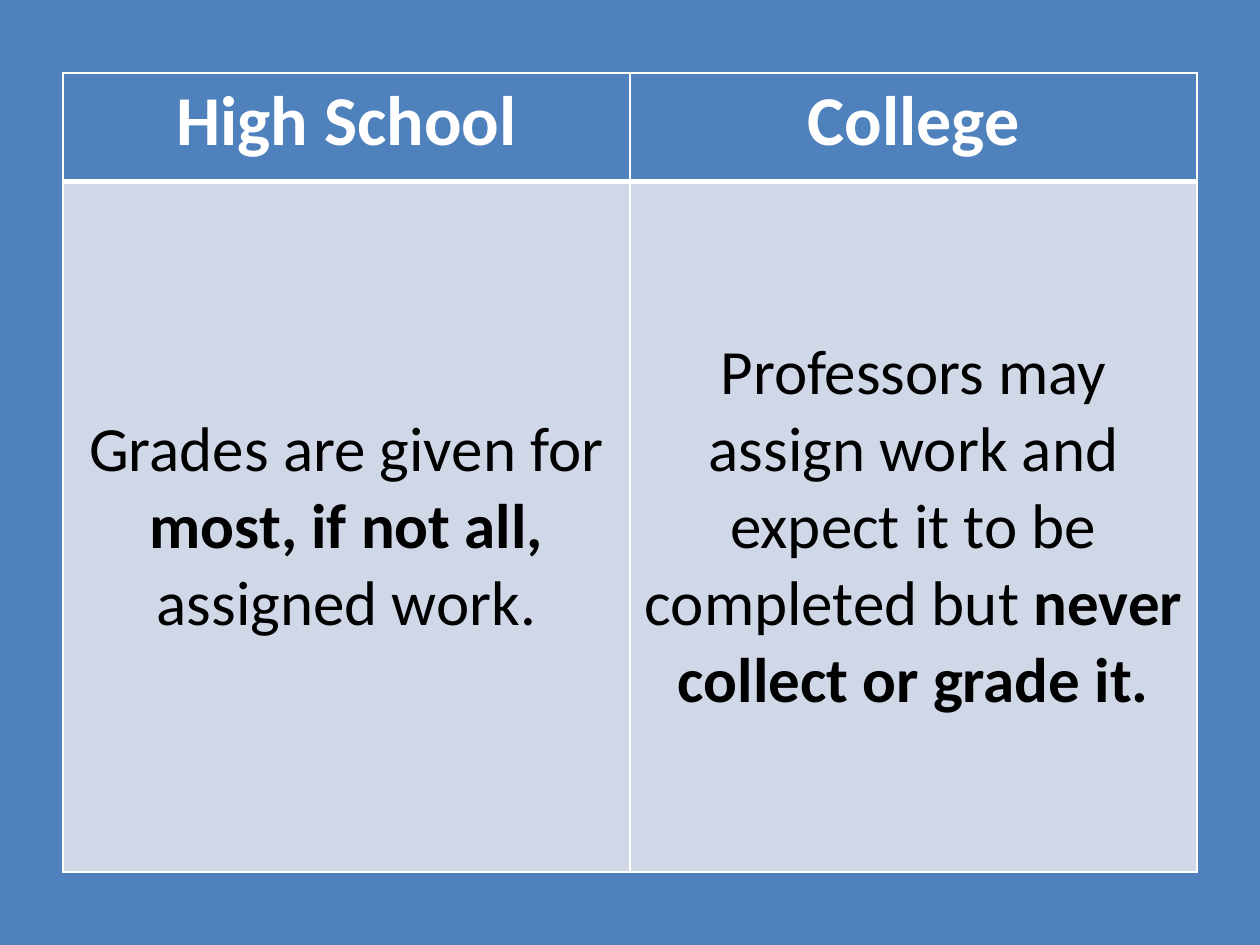
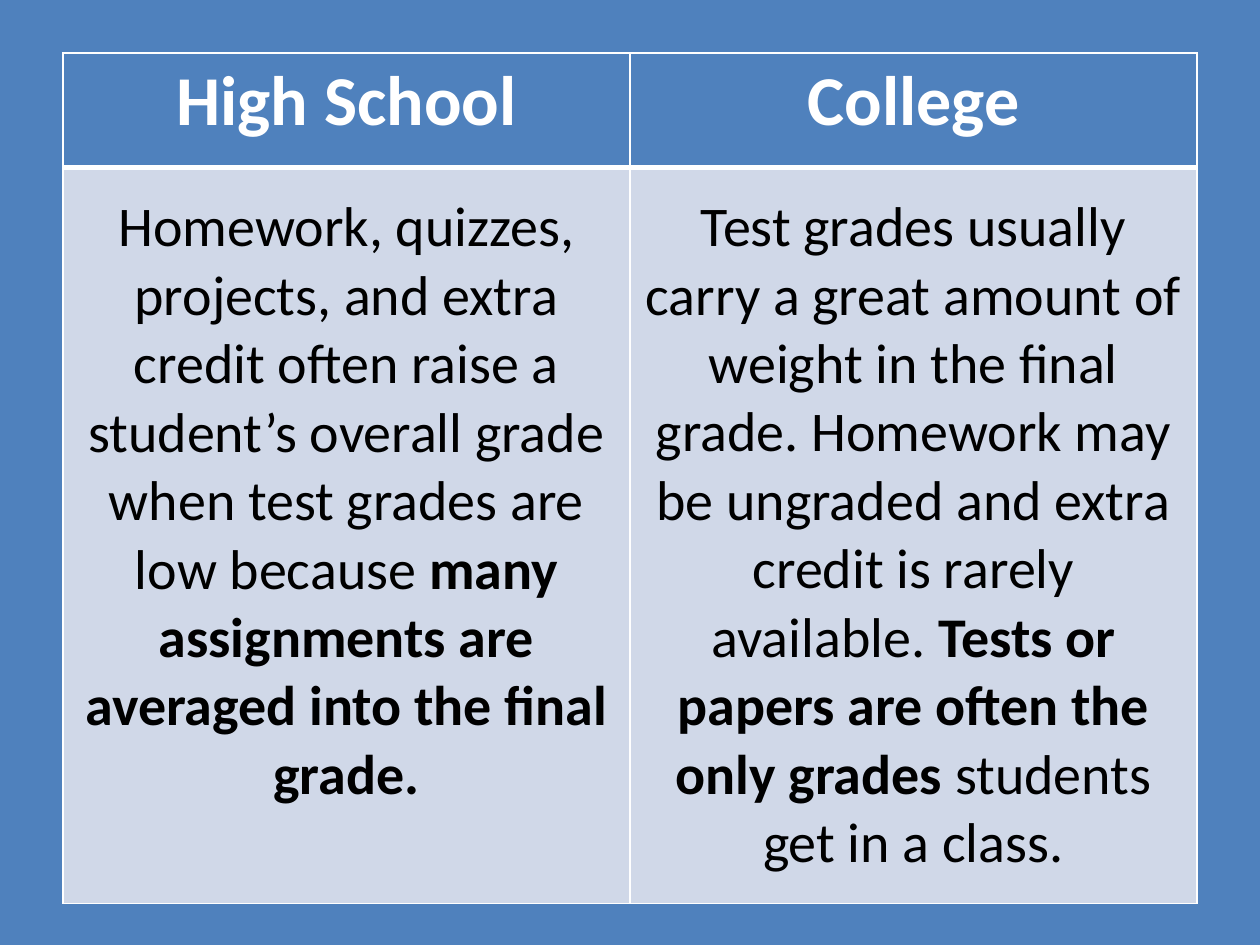
"""Build two slides comparing grading in high school and college."""
import pptx
import pptx.dml.color
import pptx.enum.text
import pptx.oxml
import pptx.oxml.ns
import pptx.util
from pptx.util import Inches

COLORS = {"blue": "4F81BD", "pale": "D0D8E8", "white": "FFFFFF", "black": "000000"}
FONT = "Calibri"
HEADERS = ["High School", "College"]
HEADER_SIZE = 40
LEFT, COL_WIDTH = 0.5, 4.5
THIN, THICK = 1, 3

SLIDES = [
    {
        "top": 0.58, "rows": [0.86, 5.48], "size": 36, "bottom_margins": [0.05, 0.05],
        "cells": [
            [("Grades are given for ", False), ("most, if not all, ", True),
             ("assigned work.", False)],
            [("Professors may assign work and expect it to be completed but ", False),
             ("never collect or grade it.", True)],
        ],
    },
    {
        "top": 0.42, "rows": [0.91, 5.84], "size": 32, "bottom_margins": [0.59, 0.05],
        "cells": [
            [("Homework, quizzes, projects, and extra credit often raise a student’s "
              "overall grade when test grades are low because ", False),
             ("many assignments are averaged into the final grade.", True)],
            [("Test grades usually carry a great amount of weight in the final grade. "
              "Homework may be ungraded and extra credit is rarely available. ", False),
             ("Tests or papers are often the only grades", True),
             (" students get in a class.", False)],
        ],
    },
]


def rgb(name):
    return pptx.dml.color.RGBColor.from_string(COLORS[name])


def set_borders(cell, top, bottom):
    tcPr = cell._tc.get_or_add_tcPr()
    widths = {"lnL": THIN, "lnR": THIN, "lnT": top, "lnB": bottom}
    for i, (tag, width) in enumerate(widths.items()):
        tcPr.insert(i, pptx.oxml.parse_xml(
            f'<a:{tag} {pptx.oxml.ns.nsdecls("a")} w="{pptx.util.Pt(width)}">'
            f'<a:solidFill><a:srgbClr val="{COLORS["white"]}"/></a:solidFill></a:{tag}>'))


def fill_cell(cell, runs, size, color, fill):
    cell.fill.solid()
    cell.fill.fore_color.rgb = rgb(fill)
    p = cell.text_frame.paragraphs[0]
    p.alignment = pptx.enum.text.PP_ALIGN.CENTER
    p.font.name = FONT
    p.font.size = pptx.util.Pt(size)
    p.font.color.rgb = rgb(color)
    for text, bold in runs:
        r = p.add_run()
        r.text = text
        r.font.bold = bold


def add_comparison(prs, data):
    s = prs.slides.add_slide(prs.slide_layouts[6])
    s.background.fill.solid()
    s.background.fill.fore_color.rgb = rgb("blue")
    table = s.shapes.add_table(
        2, len(HEADERS), Inches(LEFT), Inches(data["top"]),
        Inches(COL_WIDTH * len(HEADERS)), Inches(sum(data["rows"]))).table
    for row, height in zip(table.rows, data["rows"]):
        row.height = Inches(height)
    for col, header in enumerate(HEADERS):
        head, body = table.cell(0, col), table.cell(1, col)
        fill_cell(head, [(header, True)], HEADER_SIZE, "white", "blue")
        set_borders(head, THIN, THICK)
        fill_cell(body, data["cells"][col], data["size"], "black", "pale")
        set_borders(body, THICK, THIN)
        body.vertical_anchor = pptx.enum.text.MSO_ANCHOR.MIDDLE
        body.margin_bottom = Inches(data["bottom_margins"][col])


def main():
    prs = pptx.Presentation()
    prs.slide_width, prs.slide_height = Inches(10), Inches(7.5)
    for data in SLIDES:
        add_comparison(prs, data)
    prs.save("out.pptx")


if __name__ == "__main__":
    main()
